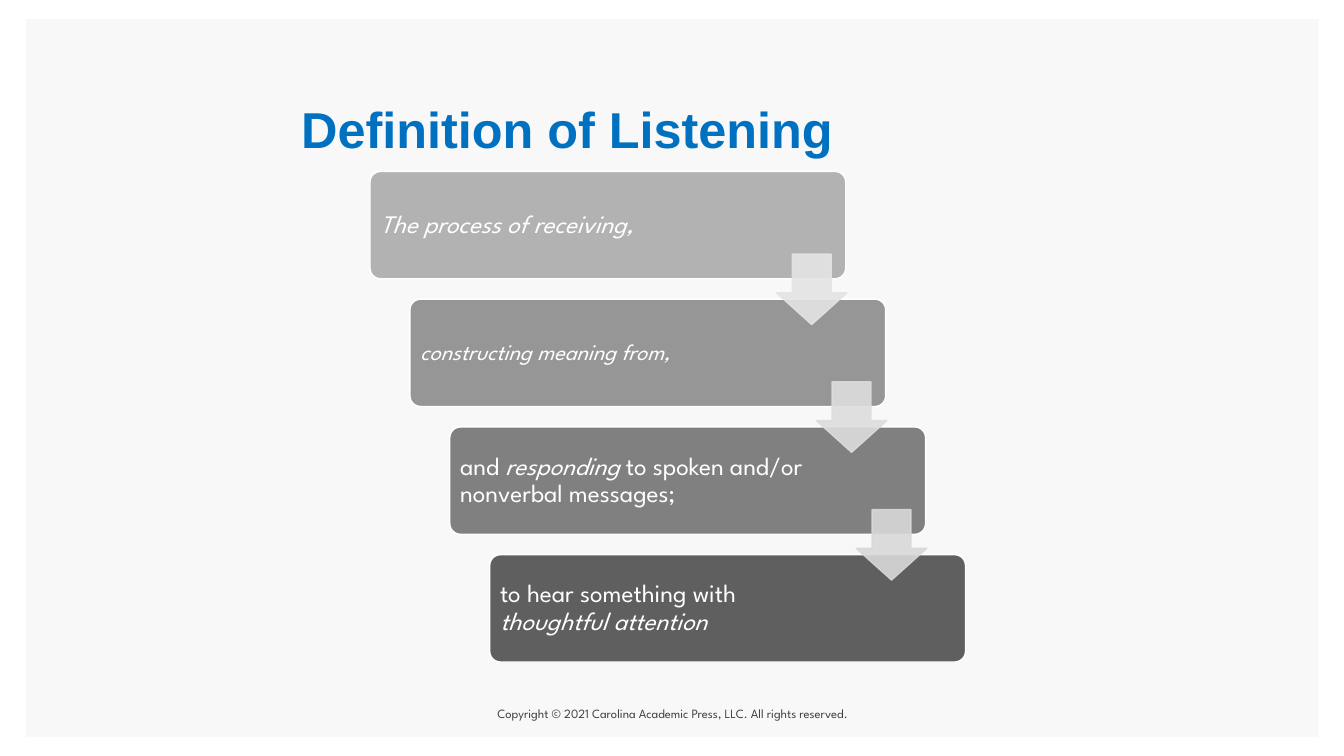
from dataclasses import dataclass

from lxml import etree
from pptx import Presentation, util as u
from pptx.dml.color import RGBColor
from pptx.enum import shapes, text
from pptx.oxml.ns import qn


@dataclass(frozen=True)
class Theme:
    """Colours, fonts and type sizes."""
    paper: str = "F8F8F8"
    white: str = "FFFFFF"
    title: str = "0070C0"
    footer: str = "404040"
    panels: tuple = ("B2B2B2", "969696", "808080", "5F5F5F")
    arrows: tuple = ("E4E4E4", "DDDDDD", "D8D8D8")
    head_font: str = "Arial"
    body_font: str = "League Spartan"
    head_size: int = 36
    body_size: int = 18
    small_size: int = 16
    foot_size: int = 9


class Deck:
    """Draws styled elements on one slide, in percent of its size."""

    def __init__(self, theme):
        self.theme = theme
        self.prs = Presentation()
        self.prs.slide_width = u.Inches(13.33)
        self.prs.slide_height = u.Inches(7.5)
        self.s = self.prs.slides.add_slide(self.prs.slide_layouts[6])

    def box(self, x, y, w, h):
        """Turn percentages into slide lengths."""
        across, down = self.prs.slide_width, self.prs.slide_height
        return [int(v * side / 100) for v, side in zip((x, y, w, h), (across, down) * 2)]

    def shape(self, kind, at, fill, line=None, adj=(), alpha=None):
        """Add a filled preset shape."""
        sp = self.s.shapes.add_shape(kind, *self.box(*at))
        sp.shadow.inherit = False
        for i, value in enumerate(adj):
            sp.adjustments[i] = value
        sp.fill.solid()
        sp.fill.fore_color.rgb = RGBColor.from_string(fill)
        if line:
            sp.line.color.rgb = RGBColor.from_string(line)
            sp.line.width = u.Pt(1)
        else:
            sp.line.fill.background()
        if alpha:
            for clr in sp._element.spPr.iter(qn("a:srgbClr")):
                etree.SubElement(clr, qn("a:alpha"), val=str(alpha * 1000))
        return sp

    def label(self, runs, at, *, size, color, font, bold=None, align=None,
              anchor=text.MSO_ANCHOR.TOP, inset=None, spacing=None, grow=False):
        """Add a text box from (text, italic) runs."""
        tf = self.s.shapes.add_textbox(*self.box(*at)).text_frame
        tf.word_wrap = True
        tf.vertical_anchor = anchor
        if grow:
            tf.auto_size = text.MSO_AUTO_SIZE.SHAPE_TO_FIT_TEXT
        if inset is not None:
            tf.margin_left = tf.margin_right = u.Inches(inset)
            tf.margin_top = tf.margin_bottom = u.Inches(inset)
        p = tf.paragraphs[0]
        p.alignment = align
        p.line_spacing = spacing
        for words, italic in runs:
            r = p.add_run()
            r.text = words
            r.font.name = font
            r.font.size = u.Pt(size)
            r.font.bold = bold
            r.font.italic = italic
            r.font.color.rgb = RGBColor.from_string(color)

    def panel(self, i, runs, size):
        """Add one step of the staircase with its text."""
        t = self.theme
        x, y = 27.53 + 2.97 * i, 22.67 + 16.9 * i
        self.shape(shapes.MSO_SHAPE.ROUNDED_RECTANGLE, (x, y, 35.4, 14.2),
                   t.panels[i], t.white, (0.1,))
        self.label(runs, (x + 0.24, y + 0.4, 26.8, 13.4), size=size, color=t.white,
                   font=t.body_font, anchor=text.MSO_ANCHOR.MIDDLE, inset=0.07, spacing=0.9)

    def arrow(self, i, color):
        """Add the arrow leading out of step i."""
        self.shape(shapes.MSO_SHAPE.DOWN_ARROW,
                   (57.77 + 2.97 * i, 33.6 + 16.9 * i, 5.25, 9.33),
                   color, color, (0.55, 0.45), 90)


def main():
    """Build the slide and save it."""
    t = Theme()
    d = Deck(t)
    d.shape(shapes.MSO_SHAPE.RECTANGLE, (1.95, 2.53, 96.17, 94.93), t.paper)
    steps = [
        ([("The process of receiving,", True)], t.body_size),
        ([("constructing meaning from,", True)], t.small_size),
        ([("and ", False), ("responding", True),
          (" to spoken and/or nonverbal messages;", False)], t.body_size),
        ([("to hear something with ", False), ("thoughtful attention", True)], t.body_size),
    ]
    for i, (runs, size) in enumerate(steps):
        d.panel(i, runs, size)
    for i, color in enumerate(t.arrows):
        d.arrow(i, color)
    d.label([("Definition of Listening", False)], (21.68, 12.27, 46.96, 9.47),
            size=t.head_size, color=t.title, font=t.head_font, bold=True, grow=True)
    d.label([("Copyright © 2021 Carolina Academic Press, LLC. All rights reserved.", False)],
            (28.43, 92, 43.2, 4), size=t.foot_size, color=t.footer, font=t.body_font,
            align=text.PP_ALIGN.CENTER, anchor=text.MSO_ANCHOR.BOTTOM)
    d.prs.save("out.pptx")


if __name__ == "__main__":
    main()
